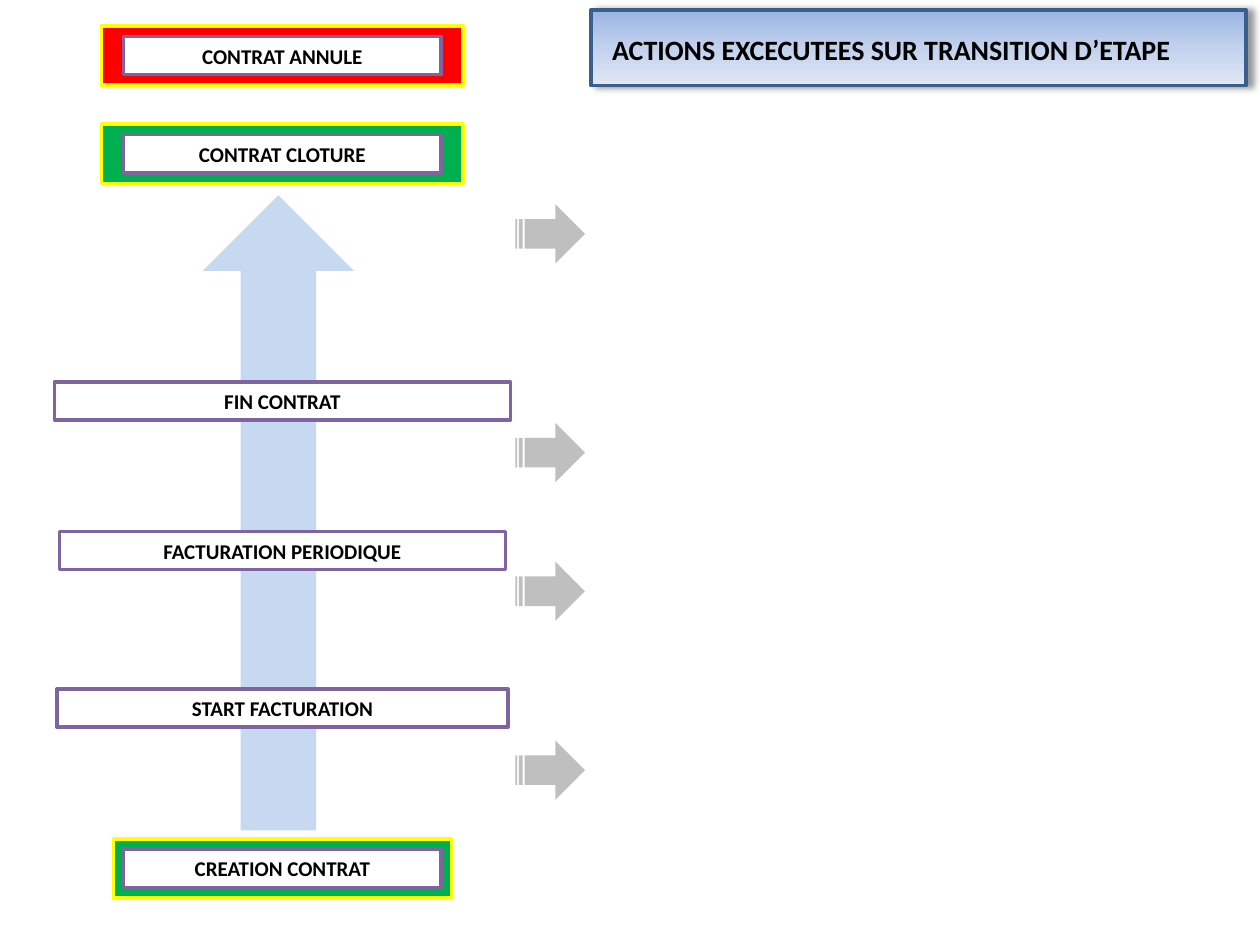
from copy import deepcopy
from pptx import Presentation
from pptx.dml.color import RGBColor
from pptx.enum import shapes, text
from pptx.oxml import parse_xml
from pptx.util import Pt

HUES = {"box": "FFFFFF", "edge": "8064A2", "rim": "FFFF00", "go": "00B050",
        "stop": "FF0000", "flow": "C6D9F1", "mark": "BFBFBF",
        "ink": "000000", "border": "3A5F8C"}
FADE = [(0, "9AB5E4"), (0.5, "C2D1ED"), (1, "E1E8F5")]
FONT = "Calibri"
TITLE = "ACTIONS EXCECUTEES SUR TRANSITION D’ETAPE"

# label, top, width, frame colour, frame width
STEPS = [
    ("CONTRAT ANNULE", 20.9, 181.5, "stop", 206.6),
    ("CONTRAT CLOTURE", 77, 181.5, "go", 206.6),
    ("FIN CONTRAT", 218.2, 260.6, None, 0),
    ("FACTURATION PERIODIQUE", 303.8, 255, None, 0),
    ("START FACTURATION", 393.8, 257.8, None, 0),
    ("CREATION CONTRAT", 485.3, 181.5, "go", 193),
]
MARKS = [116.8, 241.8, 321, 423.2]  # tops of the transition arrows
MID, STEP_H, FRAME_H = 161.4, 21.8, 33.8

prs = Presentation()
prs.slide_width, prs.slide_height = Pt(720), Pt(540)
slide = prs.slides.add_slide(prs.slide_layouts[6])
KIND = shapes.MSO_SHAPE


def tint(hue):
    return RGBColor.from_string(HUES[hue])


def draw(kind, x, y, w, h, fill, line=None):
    shape = slide.shapes.add_shape(kind, Pt(x), Pt(y), Pt(w), Pt(h))
    shape.shadow.inherit = False
    shape.fill.solid()
    shape.fill.fore_color.rgb = tint(fill)
    if line:
        shape.line.color.rgb = tint(line)
        shape.line.width = Pt(2)
    else:
        shape.line.fill.background()
    return shape


def write(shape, words, size, align):
    frame = shape.text_frame
    frame.text = words
    frame.word_wrap = True
    frame.auto_size = text.MSO_AUTO_SIZE.SHAPE_TO_FIT_TEXT
    para = frame.paragraphs[0]
    para.alignment = align
    font = para.runs[0].font
    font.name, font.size, font.bold = FONT, Pt(size), True
    font.color.rgb = tint("ink")


# Title banner with gradient and shadow
banner = draw(KIND.RECTANGLE, 337.7, 5.8, 374.4, 43.2, "box", "border")
banner.fill.gradient()
banner.fill.gradient_angle = 270
stops = banner.fill.gradient_stops
last = stops[-1]._gs
last.addprevious(deepcopy(last))
for stop, (place, hue) in zip(banner.fill.gradient_stops, FADE):
    stop.position = place
    stop.color.rgb = RGBColor.from_string(hue)
effects = banner._element.spPr.find(
    "{http://schemas.openxmlformats.org/drawingml/2006/main}effectLst")
effects.append(parse_xml(
    '<a:outerShdw xmlns:a="http://schemas.openxmlformats.org/drawingml/2006/main"'
    f' blurRad="{Pt(4)}" dist="{Pt(3)}" dir="0" algn="l" rotWithShape="0">'
    f'<a:srgbClr val="{HUES["ink"]}"><a:alpha val="40000"/></a:srgbClr>'
    '</a:outerShdw>'))

# Main upward arrow
flow = draw(KIND.RIGHT_ARROW, -22.3, 249.8, 362.9, 86.4, "flow")
flow.rotation = 270

# Contract steps, centred on one axis
for label, top, wide, hue, rim in STEPS:
    if hue:
        draw(KIND.RECTANGLE, MID - rim / 2, top - (FRAME_H - STEP_H) / 2,
             rim, FRAME_H, hue, "rim")
    step = draw(KIND.RECTANGLE, MID - wide / 2, top, wide, STEP_H, "box", "edge")
    write(step, label, 12, text.PP_ALIGN.CENTER)

# Transition arrows
for top in MARKS:
    draw(KIND.STRIPED_RIGHT_ARROW, 294.5, top, 39.8, FRAME_H, "mark")

# Title text
title = slide.shapes.add_textbox(Pt(342.7), Pt(15.1), Pt(351.4), Pt(26.6))
write(title, TITLE, 16, text.PP_ALIGN.LEFT)

prs.save("out.pptx")
